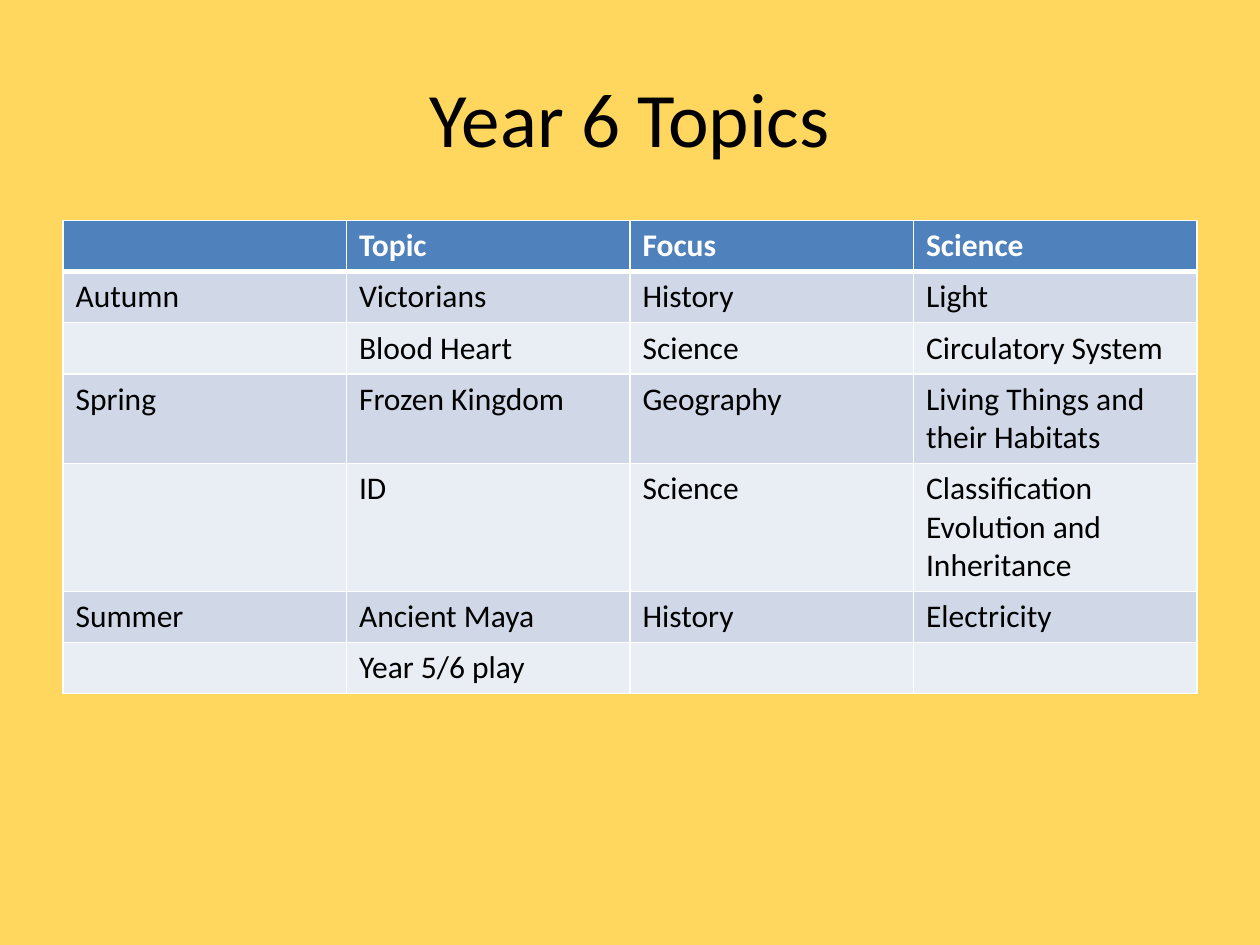
"""Builds a slide with the table of Year 6 topics by term."""
from dataclasses import dataclass

from lxml.etree import SubElement
from pptx import Presentation
from pptx.dml.color import RGBColor
from pptx.enum.text import MSO_ANCHOR, PP_ALIGN
from pptx.oxml.ns import qn
from pptx.slide import Slide
from pptx.table import _Cell
from pptx.text.text import _Paragraph
from pptx.util import Pt

BACKGROUND = RGBColor(0xFF, 0xD7, 0x5E)
BLACK = RGBColor(0x00, 0x00, 0x00)
WHITE = RGBColor(0xFF, 0xFF, 0xFF)
HEADER_BLUE = RGBColor(0x4F, 0x81, 0xBD)
BAND_DARK = RGBColor(0xD0, 0xD8, 0xE8)
BAND_LIGHT = RGBColor(0xE9, 0xED, 0xF4)

FONT = "Calibri"
LEFT, WIDTH = Pt(36), Pt(648)
ROW_HEIGHT = Pt(29.2)
THIN, THICK = Pt(1), Pt(3)


@dataclass(frozen=True)
class Topic:
    term: str = ""
    topic: str = ""
    focus: str = ""
    science: str = ""

    def values(self) -> tuple[str, ...]:
        return self.term, self.topic, self.focus, self.science


@dataclass(frozen=True)
class RowStyle:
    fill: RGBColor
    color: RGBColor = BLACK
    bold: bool = False
    top: int = THIN
    bottom: int = THIN


HEADER = Topic(topic="Topic", focus="Focus", science="Science")
TOPICS = [
    Topic("Autumn", "Victorians", "History", "Light"),
    Topic("", "Blood Heart", "Science", "Circulatory System"),
    Topic("Spring", "Frozen Kingdom", "Geography", "Living Things and their Habitats"),
    Topic("", "ID", "Science", "Classification\nEvolution and Inheritance"),
    Topic("Summer", "Ancient Maya", "History", "Electricity"),
    Topic("", "Year 5/6 play"),
]


def row_style(row: int) -> RowStyle:
    if row == 0:
        return RowStyle(HEADER_BLUE, WHITE, bold=True, bottom=THICK)
    return RowStyle(BAND_DARK if row % 2 else BAND_LIGHT, top=THICK if row == 1 else THIN)


def add_run(p: _Paragraph, text: str, size: int, color: RGBColor, bold: bool = False) -> None:
    r = p.add_run()
    r.text = text
    r.font.name = FONT
    r.font.size = Pt(size)
    r.font.bold = bold
    r.font.color.rgb = color


def add_border(cell: _Cell, side: str, width: int) -> None:
    ln = SubElement(cell._tc.get_or_add_tcPr(), qn(f"a:ln{side}"), w=str(width))
    SubElement(SubElement(ln, qn("a:solidFill")), qn("a:srgbClr"), val=str(WHITE))


def format_cell(cell: _Cell, text: str, style: RowStyle) -> None:
    for side, width in zip("LRTB", (THIN, THIN, style.top, style.bottom)):
        add_border(cell, side, width)
    cell.fill.solid()
    cell.fill.fore_color.rgb = style.fill
    tf = cell.text_frame
    for i, line in enumerate(text.splitlines()):
        p = tf.add_paragraph() if i else tf.paragraphs[0]
        add_run(p, line, 18, style.color, style.bold)


def add_title(s: Slide, text: str) -> None:
    sp = s.shapes.title
    sp.left, sp.top, sp.width, sp.height = LEFT, Pt(21.6), WIDTH, Pt(90)
    tf = sp.text_frame
    tf.vertical_anchor = MSO_ANCHOR.MIDDLE
    p = tf.paragraphs[0]
    p.alignment = PP_ALIGN.CENTER
    add_run(p, text, 44, BLACK)


def add_topic_table(s: Slide, topics: list[Topic]) -> None:
    rows = [HEADER, *topics]
    table = s.shapes.add_table(
        len(rows), len(HEADER.values()), LEFT, Pt(126), WIDTH, ROW_HEIGHT * len(rows)
    ).table
    table.horz_banding = False
    for i, topic in enumerate(rows):
        for j, text in enumerate(topic.values()):
            format_cell(table.cell(i, j), text, row_style(i))


def main() -> None:
    prs = Presentation()
    prs.slide_width, prs.slide_height = Pt(720), Pt(540)
    s = prs.slides.add_slide(prs.slide_layouts.get_by_name("Title Only"))
    s.background.fill.solid()
    s.background.fill.fore_color.rgb = BACKGROUND
    add_title(s, "Year 6 Topics")
    add_topic_table(s, TOPICS)
    prs.save("out.pptx")


if __name__ == "__main__":
    main()
